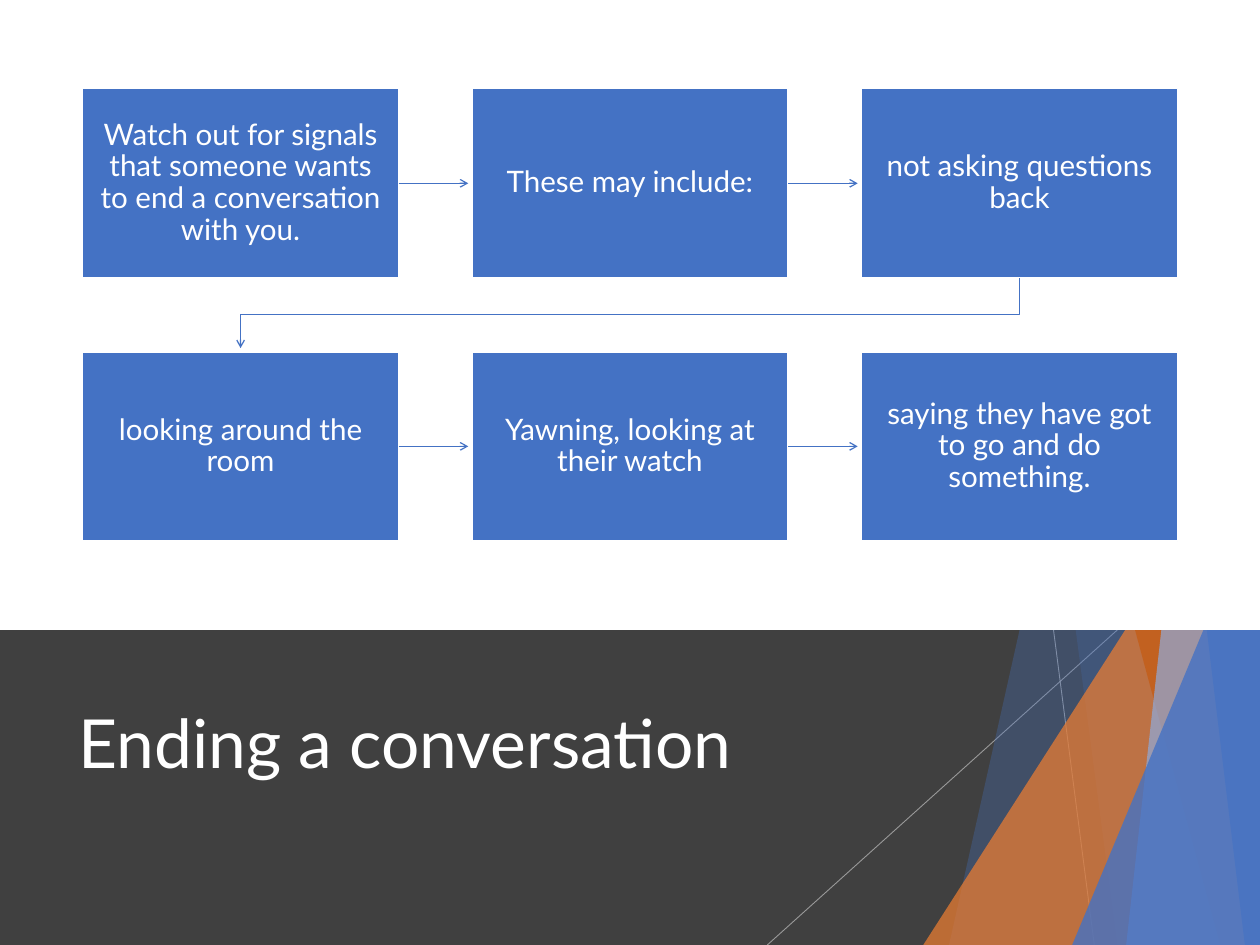
"""Build the slide "Ending a conversation": six linked boxes above a dark title band."""
import itertools

import pptx
import pptx.dml.color
import pptx.enum.shapes
import pptx.enum.text
import pptx.oxml
import pptx.oxml.ns
import pptx.util

RGBColor = pptx.dml.color.RGBColor
Inches = pptx.util.Inches
Pt = pptx.util.Pt
Preset = pptx.enum.shapes.MSO_SHAPE

WHITE = RGBColor(0xFF, 0xFF, 0xFF)
CHARCOAL = RGBColor(0x40, 0x40, 0x40)
SILVER = RGBColor(0xBF, 0xBF, 0xBF)
BLUE = RGBColor(0x44, 0x72, 0xC4)
PALE_BLUE = RGBColor(0x8F, 0xAA, 0xDC)
ORANGE = RGBColor(0xED, 0x7D, 0x31)
RUST = RGBColor(0xC5, 0x5A, 0x11)

FONT = "Lato"
WIDTH, HEIGHT = 14.22, 10.67
BAND_TOP = HEIGHT * 2 / 3
COLUMNS = 3
LEFT, TOP = 0.93, 1.0
BOX_WIDTH, BOX_HEIGHT = 3.57, 2.14
COLUMN_STEP, ROW_STEP = 4.395, 2.97
ARROW_GAP = 0.04

STEPS = [
    "Watch out for signals that someone wants to end a conversation with you.",
    "These may include:",
    "not asking questions back",
    "looking around the room",
    "Yawning, looking at their watch",
    "saying they have got to go and do something.",
]


def drawing_element(tag, **attributes):
    """Return a new DrawingML element with the given attributes."""
    element = pptx.oxml.parse_xml(f"<a:{tag} {pptx.oxml.ns.nsdecls('a')}/>")
    for name, value in attributes.items():
        element.set(name, value)
    return element


def set_opacity(shape, percent):
    """Give every colour of the shape's own fill and line an opacity."""
    for colour in shape._element.spPr.iter(pptx.oxml.ns.qn("a:srgbClr")):
        colour.append(drawing_element("alpha", val=str(percent * 1000)))


def fill_shape(shape, colour, opacity=100):
    """Fill a shape without outline or shadow."""
    shape.shadow.inherit = False
    shape.fill.solid()
    shape.fill.fore_color.rgb = colour
    shape.line.fill.background()
    if opacity < 100:
        set_opacity(shape, opacity)


def add_panel(page, top, height, colour):
    """Add a rectangle across the whole width."""
    panel = page.shapes.add_shape(
        Preset.RECTANGLE, 0, Inches(top), Inches(WIDTH), Inches(height))
    fill_shape(panel, colour)


def add_polyline(page, points, close):
    """Add a freeform through points given in inches."""
    corners = [(Inches(x), Inches(y)) for x, y in points]
    builder = page.shapes.build_freeform(*corners[0], scale=1.0)
    builder.add_line_segments(corners[1:], close=close)
    return builder.convert_to_shape()


def add_facet(page, top_x, bottom_x, colour, opacity):
    """Add a full-height facet from a slanted left edge to the right side."""
    corners = [(top_x, 0), (WIDTH, 0), (WIDTH, HEIGHT), (bottom_x, HEIGHT)]
    fill_shape(add_polyline(page, corners, close=True), colour, opacity)


def add_corner(page, left, top, colour, opacity):
    """Add a right triangle standing in the bottom right corner."""
    corner = page.shapes.add_shape(
        Preset.ISOSCELES_TRIANGLE, Inches(left), Inches(top),
        Inches(WIDTH - left), Inches(HEIGHT - top))
    corner.adjustments[0] = 1
    fill_shape(corner, colour, opacity)


def add_line(page, start, end, colour, weight):
    """Add a straight connector without shadow."""
    line = page.shapes.add_connector(
        pptx.enum.shapes.MSO_CONNECTOR.STRAIGHT,
        *(Inches(value) for value in (*start, *end)))
    line.line.color.rgb = colour
    line.line.width = Pt(weight)
    line._element.spPr.append(drawing_element("effectLst"))
    return line


def add_arrowhead(shape):
    """Put an open arrowhead on the end of a line."""
    shape.line._get_or_add_ln().append(drawing_element("tailEnd", type="arrow"))


def write_text(shape, text, size, alignment):
    """Write one vertically centred paragraph."""
    frame = shape.text_frame
    frame.word_wrap = True
    frame.vertical_anchor = pptx.enum.text.MSO_ANCHOR.MIDDLE
    para = frame.paragraphs[0]
    para.text = text
    para.alignment = alignment
    para.line_spacing = 0.9
    para.font.name = FONT
    para.font.size = Pt(size)
    para.font.color.rgb = WHITE


def box_origin(index):
    """Return the left and top of a box in the grid."""
    row, column = divmod(index, COLUMNS)
    return LEFT + column * COLUMN_STEP, TOP + row * ROW_STEP


def add_step(page, index, text):
    """Add one box of the sequence."""
    left, top = box_origin(index)
    box = page.shapes.add_shape(
        Preset.RECTANGLE, Inches(left), Inches(top),
        Inches(BOX_WIDTH), Inches(BOX_HEIGHT))
    fill_shape(box, BLUE)
    box.line.color.rgb = WHITE
    box.line.width = Pt(1.5)
    frame = box.text_frame
    frame.margin_left = frame.margin_right = Inches(0.18)
    frame.margin_top = frame.margin_bottom = Inches(0.18)
    write_text(box, text, 24, pptx.enum.text.PP_ALIGN.CENTER)
    return box


def link_across(page, index, box):
    """Draw the arrow from a box to its right-hand neighbour."""
    left, top = box_origin(index)
    middle = top + BOX_HEIGHT / 2
    arrow = add_line(page, (left + BOX_WIDTH, middle),
                     (left + COLUMN_STEP - ARROW_GAP, middle), BLUE, 1)
    arrow.begin_connect(box, 3)
    add_arrowhead(arrow)


def link_rows(page, index):
    """Draw the bent arrow from the end of a row to the next row."""
    left, top = box_origin(index)
    next_left, next_top = box_origin(index + 1)
    start_x, end_x = left + BOX_WIDTH / 2, next_left + BOX_WIDTH / 2
    bottom = top + BOX_HEIGHT
    bend = (bottom + next_top) / 2
    arrow = add_polyline(page, [(start_x, bottom), (start_x, bend), (end_x, bend),
                                (end_x, next_top - ARROW_GAP)], close=False)
    arrow.shadow.inherit = False
    arrow.fill.background()
    arrow.line.color.rgb = BLUE
    arrow.line.width = Pt(1)
    add_arrowhead(arrow)


def add_facets(page):
    """Add the translucent decoration on the right of the title band."""
    for top_x, bottom_x in ((11.89, 12.35), (12.61, 8.66)):
        line = add_line(page, (top_x, BAND_TOP), (bottom_x, HEIGHT), SILVER, 0.75)
        set_opacity(line, 70)
    add_facet(page, 13.1, 10.71, BLUE, 30)
    add_facet(page, 11.2, 12.61, BLUE, 20)
    add_corner(page, 10.42, 4.74, ORANGE, 72)
    add_facet(page, 10.89, 13.77, RUST, 70)
    add_facet(page, 13.9, 12.71, PALE_BLUE, 70)
    add_facet(page, 12.76, 14.05, BLUE, 65)
    add_corner(page, 12.1, 5.58, BLUE, 80)


def main():
    """Build and save the slide."""
    deck = pptx.Presentation()
    deck.slide_width, deck.slide_height = Inches(WIDTH), Inches(HEIGHT)
    page = deck.slides.add_slide(deck.slide_layouts[6])
    add_panel(page, BAND_TOP, HEIGHT - BAND_TOP, CHARCOAL)
    add_facets(page)
    title = page.shapes.add_textbox(
        Inches(0.79), Inches(7.41), Inches(10.03), Inches(2.05))
    write_text(title, "Ending a conversation", 55, pptx.enum.text.PP_ALIGN.LEFT)
    add_panel(page, 0, BAND_TOP, WHITE)
    boxes = [add_step(page, index, text) for index, text in enumerate(STEPS)]
    for index, box in enumerate(itertools.islice(boxes, len(boxes) - 1)):
        if (index + 1) % COLUMNS:
            link_across(page, index, box)
        else:
            link_rows(page, index)
    deck.save("out.pptx")


if __name__ == "__main__":
    main()
